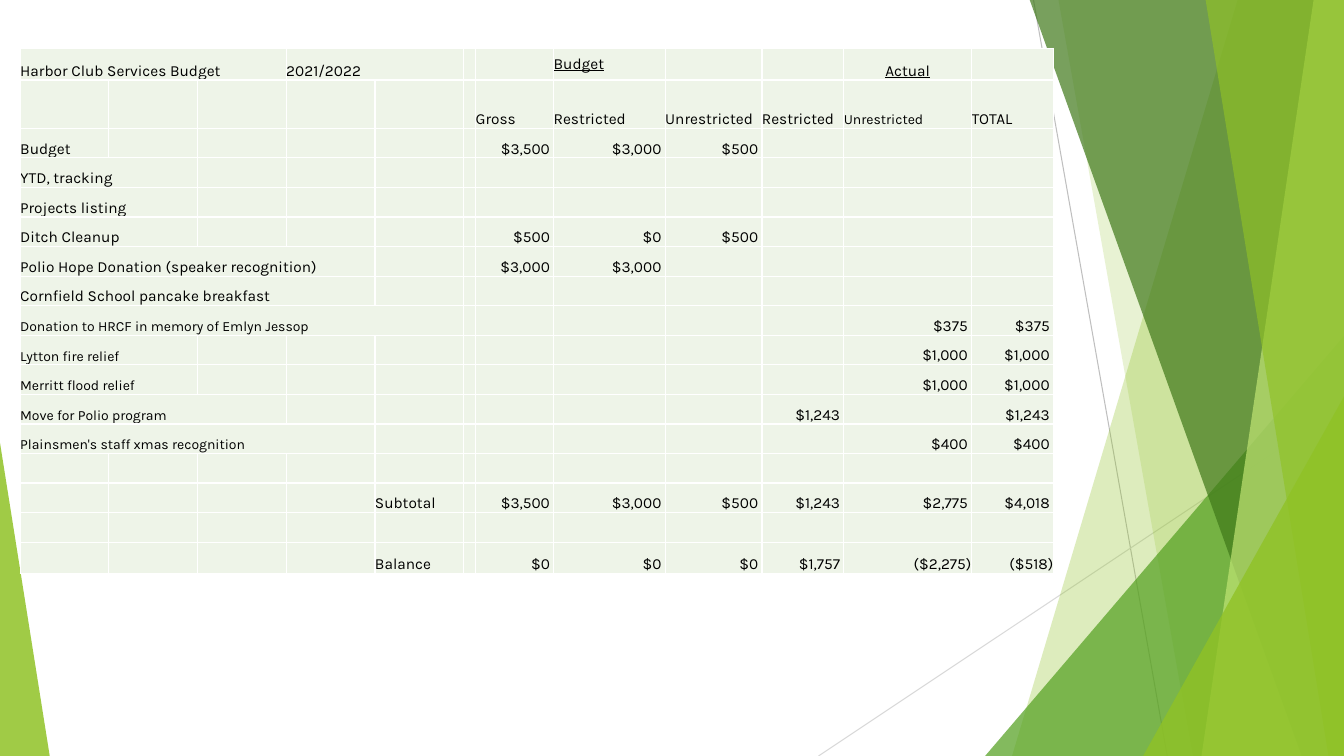
import pptx
import pptx.dml.color
import pptx.enum.shapes
import pptx.enum.text
import pptx.oxml
import pptx.oxml.ns
import pptx.util

PX = 6096  # EMU, 150 px to the inch
WIDTH, HEIGHT = 2000, 1125


def color(value):
    return pptx.dml.color.RGBColor.from_string(value)


def paint(facet, value, opacity):
    """Fill a facet with a partly transparent colour, without line or shadow."""
    facet.shadow.inherit = False
    facet.line.fill.background()
    facet.fill.solid()
    facet.fill.fore_color.rgb = color(value)
    srgb = facet.fill._xPr.find(".//" + pptx.oxml.ns.qn("a:srgbClr"))
    alpha = pptx.oxml.parse_xml(
        f'<a:alpha {pptx.oxml.ns.nsdecls("a")} val="{opacity * 1000}"/>')
    srgb.append(alpha)


prs = pptx.Presentation()
prs.slide_width = WIDTH * PX
prs.slide_height = HEIGHT * PX
slide = prs.slides.add_slide(prs.slide_layouts[6])
shapes = slide.shapes

# Thin lines behind the facets
for x1, y1, x2, y2, shade in [
    (1538, 0, 1737, HEIGHT, "BFBFBF"),
    (WIDTH, 604, 1218, HEIGHT, "D9D9D9"),
]:
    ray = shapes.add_connector(
        pptx.enum.shapes.MSO_CONNECTOR.STRAIGHT, x1 * PX, y1 * PX, x2 * PX, y2 * PX)
    ray.line.color.rgb = color(shade)
    ray.line.width = pptx.util.Pt(0.75)
    ray._element.spPr.append(
        pptx.oxml.parse_xml(f'<a:effectLst {pptx.oxml.ns.nsdecls("a")}/>'))

# Facets: a band has the x of its left edge at top and bottom,
# a triangle has left, top, width and the position of its apex
for kind, place, shade, opacity in [
    ("band", (1842, 1506), "90C226", 30),
    ("band", (1575, 1775), "90C226", 20),
    ("triangle", (1466, 500, 534, 1), "54A021", 72),
    ("band", (1532, 1937), "3F7819", 70),
    ("band", (1955, 1788), "C0E474", 70),
    ("band", (1794, 1977), "90C226", 65),
    ("triangle", (1701, 590, 299, 1), "90C226", 80),
    ("triangle", (0, 659, 74, 0), "90C226", 85),
]:
    if kind == "band":
        top_x, bottom_x = place
        outline = shapes.build_freeform(top_x, -1, scale=PX)
        outline.add_line_segments(
            [(WIDTH, -1), (WIDTH, HEIGHT), (bottom_x, HEIGHT)], close=True)
        facet = outline.convert_to_shape()
    else:
        left, top, width, apex = place
        facet = shapes.add_shape(
            pptx.enum.shapes.MSO_SHAPE.ISOSCELES_TRIANGLE,
            left * PX, top * PX, width * PX, (HEIGHT - top) * PX)
        facet.adjustments[0] = apex
    paint(facet, shade, opacity)

# Budget table: each row has the span of its first cell and its texts by column
GROSS, BUDGET_R, BUDGET_U, ACTUAL_R, ACTUAL_U, TOTAL = range(6, 12)
budget_rows = [
    (3, {0: "Harbor Club Services Budget", 3: "2021/2022",
         BUDGET_R: "Budget", ACTUAL_U: "Actual"}),
    (1, {GROSS: "Gross", BUDGET_R: "Restricted", BUDGET_U: "Unrestricted",
         ACTUAL_R: "Restricted", ACTUAL_U: "Unrestricted", TOTAL: "TOTAL"}),
    (1, {0: "Budget", GROSS: "$3,500", BUDGET_R: "$3,000", BUDGET_U: "$500"}),
    (2, {0: "YTD, tracking"}),
    (2, {0: "Projects listing"}),
    (2, {0: "Ditch Cleanup", GROSS: "$500", BUDGET_R: "$0", BUDGET_U: "$500"}),
    (4, {0: "Polio Hope Donation (speaker recognition)",
         GROSS: "$3,000", BUDGET_R: "$3,000"}),
    (4, {0: "Cornfield School pancake breakfast"}),
    (5, {0: "Donation to HRCF in memory of Emlyn Jessop",
         ACTUAL_U: "$375", TOTAL: "$375"}),
    (2, {0: "Lytton fire relief", ACTUAL_U: "$1,000", TOTAL: "$1,000"}),
    (2, {0: "Merritt flood relief", ACTUAL_U: "$1,000", TOTAL: "$1,000"}),
    (3, {0: "Move for Polio program", ACTUAL_R: "$1,243", TOTAL: "$1,243"}),
    (4, {0: "Plainsmen's staff xmas recognition", ACTUAL_U: "$400", TOTAL: "$400"}),
    (1, {}),
    (1, {4: "Subtotal", GROSS: "$3,500", BUDGET_R: "$3,000", BUDGET_U: "$500",
         ACTUAL_R: "$1,243", ACTUAL_U: "$2,775", TOTAL: "$4,018"}),
    (1, {}),
    (1, {4: "Balance", GROSS: "$0", BUDGET_R: "$0", BUDGET_U: "$0",
         ACTUAL_R: "$1,757", ACTUAL_U: "($2,275)", TOTAL: "($518)"}),
]
column_widths = [132] * 5 + [18, 116, 166, 144, 122, 190, 122]
row_heights = [47, 72] + [44] * 14 + [47]

budget = shapes.add_table(
    len(row_heights), len(column_widths), 30 * PX, 72 * PX,
    sum(column_widths) * PX, sum(row_heights) * PX).table
budget.first_row = False
budget.horz_banding = False
for column, width in zip(budget.columns, column_widths):
    column.width = width * PX
for row, height in zip(budget.rows, row_heights):
    row.height = height * PX

ALIGN = pptx.enum.text.PP_ALIGN
ANCHOR = pptx.enum.text.MSO_ANCHOR
for r, (first_span, texts) in enumerate(budget_rows):
    if first_span > 1:
        budget.cell(r, 0).merge(budget.cell(r, first_span - 1))
    for c in range(len(column_widths)):
        cell = budget.cell(r, c)
        cell.fill.solid()
        cell.fill.fore_color.rgb = color("EEF4E8")
        cell.margin_left = cell.margin_right = cell.margin_top = cell.margin_bottom = 0
        cell.vertical_anchor = ANCHOR.BOTTOM
        paragraph = cell.text_frame.paragraphs[0]
        if c not in texts:
            paragraph._p.get_or_add_endParaRPr().set("sz", "1100")
            continue
        text = texts[c]
        is_amount = text.startswith(("$", "($"))
        # Positive amounts keep room for a closing bracket
        paragraph.text = text + " " if text.startswith("$") else text
        if is_amount:
            paragraph.alignment = ALIGN.RIGHT
        small = (c == 0 and 8 <= r <= 12) or (r, c) == (1, ACTUAL_U)
        font = paragraph.runs[0].font
        font.name = "Karla"
        font.size = pptx.util.Pt(10 if small else 11)
        font.color.rgb = color("000000")
        if r == 0 and c >= GROSS:
            font.underline = True

budget.cell(0, 3).merge(budget.cell(0, 4))
budget.cell(0, BUDGET_R).vertical_anchor = ANCHOR.MIDDLE
budget.cell(0, ACTUAL_U).text_frame.paragraphs[0].alignment = ALIGN.CENTER

prs.save("out.pptx")
